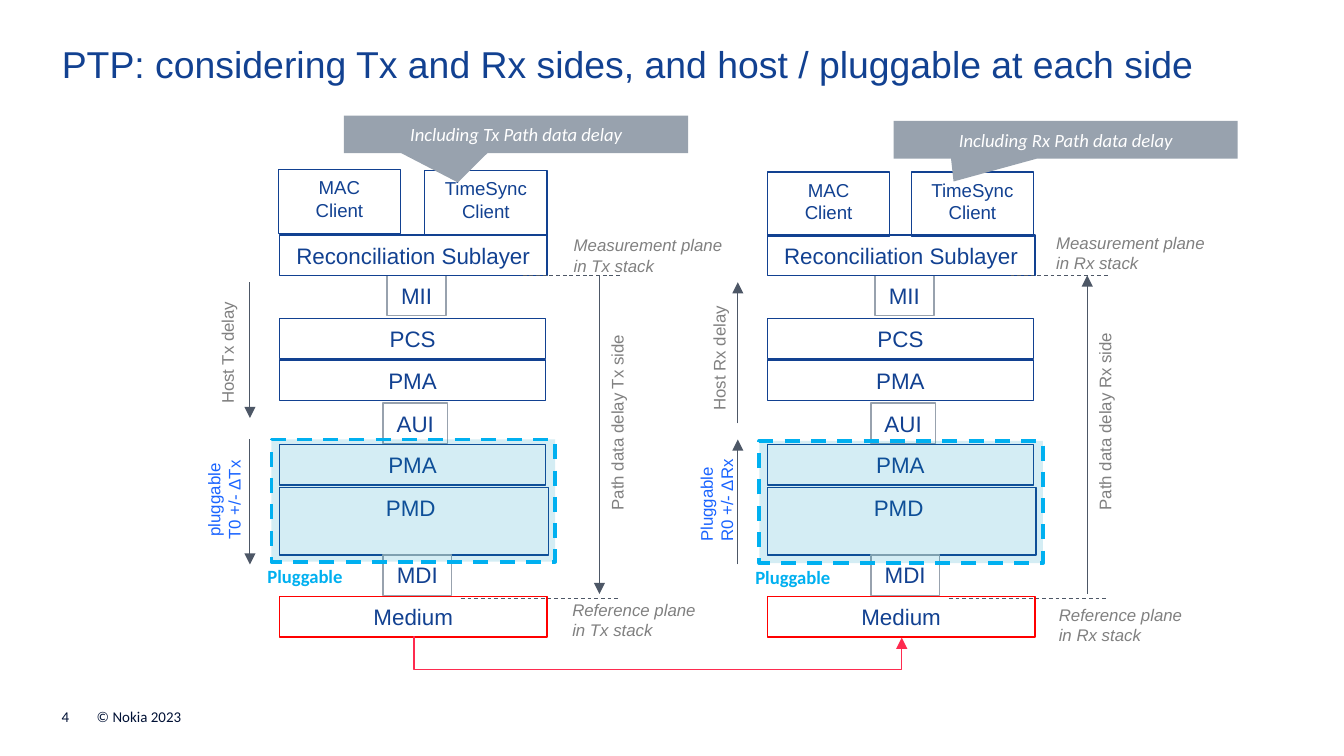
import pptx
import pptx.util
import pptx.dml.color
import pptx.enum.dml
import pptx.enum.shapes
import pptx.enum.text
import pptx.oxml
import pptx.oxml.ns

Inches = pptx.util.Inches
Pt = pptx.util.Pt
RGBColor = pptx.dml.color.RGBColor
SHAPE = pptx.enum.shapes.MSO_SHAPE
CONNECTOR = pptx.enum.shapes.MSO_CONNECTOR
ALIGN = pptx.enum.text.PP_ALIGN
ANCHOR = pptx.enum.text.MSO_ANCHOR
FIT_SHAPE = pptx.enum.text.MSO_AUTO_SIZE.SHAPE_TO_FIT_TEXT
DASH = pptx.enum.dml.MSO_LINE.DASH
qn = pptx.oxml.ns.qn
NS = pptx.oxml.ns.nsdecls("a")

BLUE = RGBColor(0x12, 0x41, 0x91)
BRIGHT_BLUE = RGBColor(0x1A, 0x64, 0xFF)
CYAN = RGBColor(0x00, 0xB0, 0xF0)
TEAL = RGBColor(0x00, 0x97, 0xBF)
NAVY = RGBColor(0x00, 0x11, 0x35)
RED = RGBColor(0xFF, 0x00, 0x00)
PINK = RGBColor(0xFE, 0x2B, 0x4F)
STEEL = RGBColor(0x98, 0xA2, 0xAE)
SLATE = RGBColor(0x4D, 0x57, 0x66)
GRAY = RGBColor(0x80, 0x80, 0x80)
WHITE = RGBColor(0xFF, 0xFF, 0xFF)

STACK_W = 1.99
ROW_H = 0.3
# text, left, top, width, height, outline; relative to the stack's corner
LAYERS = [
    ("PCS", 0, 1.11, 1.98, ROW_H, BLUE),
    ("PMA", 0, 1.42, 1.98, ROW_H, BLUE),
    ("MII", 0.8, 0.79, 0.44, ROW_H, STEEL),
    ("AUI", 0.77, 1.74, 0.48, ROW_H, STEEL),
    ("PMA", 0, 2.05, 1.98, ROW_H, BLUE),
    ("PMD ", 0, 2.37, 2, 0.5, BLUE),
    ("MDI", 0.77, 2.87, 0.51, ROW_H, STEEL),
    ("Medium", 0, 3.18, STACK_W, ROW_H, RED),
    ("Reconciliation Sublayer", 0, 0.49, STACK_W, ROW_H, BLUE),
]


def write(s, text, size, color, font="Arial", align=ALIGN.LEFT, anchor=ANCHOR.TOP,
          margins=(0.1, 0.05), wrap=True, bold=False, italic=False):
    tf = s.text_frame
    tf.text = text
    tf.word_wrap = wrap
    tf.vertical_anchor = anchor
    tf.margin_left = tf.margin_right = Inches(margins[0])
    tf.margin_top = tf.margin_bottom = Inches(margins[1])
    for p in tf.paragraphs:
        p.alignment = align
        for r in p.runs:
            r.font.name, r.font.size = font, Pt(size)
            r.font.bold, r.font.italic = bold, italic
            r.font.color.rgb = color


def add_label(slide, x, y, w, h, text, size, color, rotation=0, **style):
    s = slide.shapes.add_textbox(Inches(x), Inches(y), Inches(w), Inches(h))
    s.rotation = rotation
    write(s, text, size, color, **style)
    s.text_frame.auto_size = FIT_SHAPE


def add_box(slide, x, y, w, h, line=None, fill=None, kind=SHAPE.RECTANGLE, weight=0.75):
    s = slide.shapes.add_shape(kind, Inches(x), Inches(y), Inches(w), Inches(h))
    s.shadow.inherit = False
    if fill is None:
        s.fill.background()
    else:
        s.fill.solid()
        s.fill.fore_color.rgb = fill
    if line is None:
        s.line.fill.background()
    else:
        s.line.color.rgb = line
        s.line.width = Pt(weight)
    return s


def add_line(slide, x1, y1, x2, y2, color=SLATE, weight=0.5, arrow=False,
             dashed=False, kind=CONNECTOR.STRAIGHT):
    c = slide.shapes.add_connector(kind, Inches(x1), Inches(y1), Inches(x2), Inches(y2))
    c.line.color.rgb = color
    c.line.width = Pt(weight)
    sp_pr = c._element.spPr
    if dashed:
        c.line.dash_style = DASH
    if arrow:
        sp_pr.find(qn("a:ln")).append(
            pptx.oxml.parse_xml(f'<a:tailEnd {NS} type="triangle"/>'))
    sp_pr.append(pptx.oxml.parse_xml(f"<a:effectLst {NS}/>"))
    return c


def add_delay_arrow(slide, x, top, bottom, upward):
    start, end = (bottom, top) if upward else (top, bottom)
    add_line(slide, x, start, x, end, arrow=True)


def add_layers(slide, x, y):
    for text, dx, dy, w, h, line in LAYERS:
        s = add_box(slide, x + dx, y + dy, w, h, line)
        write(s, text, 12, BLUE, align=ALIGN.CENTER, wrap=line != STEEL)


def add_clients(slide, x, y, mac, timesync):
    for text, (dx, dy) in (("TimeSync\vClient", timesync), ("MAC\vClient", mac)):
        s = add_box(slide, x + dx, y + dy, 0.91, 0.48, BLUE)
        write(s, text, 10, BLUE, align=ALIGN.CENTER, wrap=False)


def add_pluggable(slide, x, y):
    """Translucent dashed frame around the pluggable layers, with its caption."""
    s = add_box(slide, x, y, 2.11, 0.91, CYAN, TEAL, weight=2)
    s.line.dash_style = DASH
    color = s._element.spPr.find(".//" + qn("a:srgbClr"))
    color.append(pptx.oxml.parse_xml(f'<a:alpha {NS} val="17000"/>'))
    add_label(slide, x - 0.11, y + 0.85, 0.79, 0.33, "Pluggable", 10, CYAN,
              font="Calibri", bold=True, margins=(0.08, 0.08), wrap=False)


def add_path_delay(slide, x, y, side, upward, measurement, reference):
    add_line(slide, x + 1.81, y + 0.79, x + 2.54, y + 0.79, dashed=True)
    add_line(slide, x + 1.35, y + 3.19, x + 2.54, y + 3.19, dashed=True)
    add_delay_arrow(slide, x + 2.38, y + 0.79, y + 3.16, upward)
    add_label(slide, x + 1.75, y + 1.75, 1.52, 0.25, f"Path data delay {side} side",
              9, GRAY, 270, wrap=False)
    for name, w, (dx, dy) in (("Measurement", 1.32, measurement),
                              ("Reference", 1.13, reference)):
        add_label(slide, x + dx, y + dy, w, 0.4, f"{name} plane\vin {side} stack",
                  9, GRAY, italic=True, wrap=False)


def add_local_delays(slide, x, y, side, upward, host_end, host_label, plug_text,
                     plug_x, plug_w):
    add_delay_arrow(slide, x - 0.22, y + 2.01, y + 2.94, upward)
    add_label(slide, x + plug_x, y + 2.26, plug_w, 0.4, plug_text, 9, BRIGHT_BLUE, 270,
              align=ALIGN.LEFT if upward else ALIGN.CENTER, wrap=False)
    add_delay_arrow(slide, x - 0.22, y + 0.84, y + host_end, upward)
    dx, dy = host_label
    add_label(slide, x + dx, y + dy, 0.98, 0.25, f"Host {side} delay", 9, GRAY, 270,
              align=ALIGN.CENTER, wrap=False)


def add_callout(slide, x, y, side, tip):
    s = add_box(slide, x, y, 2.56, 0.28, fill=STEEL, kind=SHAPE.RECTANGULAR_CALLOUT)
    s.adjustments[0], s.adjustments[1] = tip
    write(s, f"Including {side} Path data delay", 10, WHITE, font="Calibri",
          align=ALIGN.CENTER, anchor=ANCHOR.MIDDLE, margins=(0.08, 0.08), italic=True)


def add_stack(slide, x, y, side, upward, clients, frame_y, planes, local, callout):
    add_layers(slide, x, y)
    add_pluggable(slide, x - 0.06, y + frame_y)
    add_path_delay(slide, x, y, side, upward, *planes)
    add_clients(slide, x, y, *clients)
    add_local_delays(slide, x, y, side, upward, *local)
    dx, dy, tip = callout
    add_callout(slide, x + dx, y + dy, side, tip)


def add_medium_link(slide, x1, x2, y, drop):
    """Elbow that drops below both stacks: a quarter-turned three-part connector."""
    thin, span = 0.01, x2 - x1
    mid = (x1 + x2) / 2
    c = add_line(slide, mid + thin / 2, y - span / 2, mid - thin / 2, y + span / 2,
                 PINK, 0.75, arrow=True, kind=CONNECTOR.ELBOW)
    sp_pr = c._element.spPr
    sp_pr.find(qn("a:xfrm")).set("rot", "16200000")
    geom = sp_pr.find(qn("a:prstGeom"))
    for old in list(geom):
        geom.remove(old)
    bend = round(drop / thin * 100000)
    geom.append(pptx.oxml.parse_xml(
        f'<a:avLst {NS}><a:gd name="adj1" fmla="val {bend}"/></a:avLst>'))


def add_title_and_footer(slide):
    title = slide.shapes.title
    title.left, title.top = Inches(0.46), Inches(0.31)
    title.width, title.height = Inches(9.09), Inches(0.34)
    write(title, "PTP: considering Tx and Rx sides, and host / pluggable at each side",
          20, BLUE, margins=(0, 0))
    for x, w, text in ((0.46, 0.16, "4"), (0.72, 1.97, "© Nokia 2023")):
        add_label(slide, x, 5.27, w, 0.13, text, 8, NAVY, font="Calibri",
                  anchor=ANCHOR.BOTTOM, margins=(0, 0))


def main():
    prs = pptx.Presentation()
    prs.slide_width, prs.slide_height = Inches(10), Inches(10 * 9 / 16)
    slide = prs.slides.add_slide(prs.slide_layouts[5])
    add_title_and_footer(slide)
    tx_x, rx_x, y = 2.08, 5.71, 1.26
    add_stack(slide, tx_x, y, "Tx", False, ((-0.01, 0), (1.08, 0.01)), 2.01,
              ((2.09, 0.44), (2.08, 3.15)),
              (1.85, (-0.88, 1.24), "pluggable\vT0 +/- ΔTx", -0.81, 0.79),
              (0.48, -0.4, (-0.169, 1.279)))
    add_stack(slide, rx_x, y, "Rx", True, ((0, 0.02), (1.07, 0.02)), 2.02,
              ((2.05, 0.42), (2.07, 3.19)),
              (1.89, (-0.85, 1.28), "Pluggable\vR0 +/- ΔRx", -0.79, 0.82),
              (0.94, -0.36, (-0.326, 1.11)))
    add_medium_link(slide, tx_x + 1, rx_x + 1, 4.74, 0.25)
    prs.save("out.pptx")


if __name__ == "__main__":
    main()
